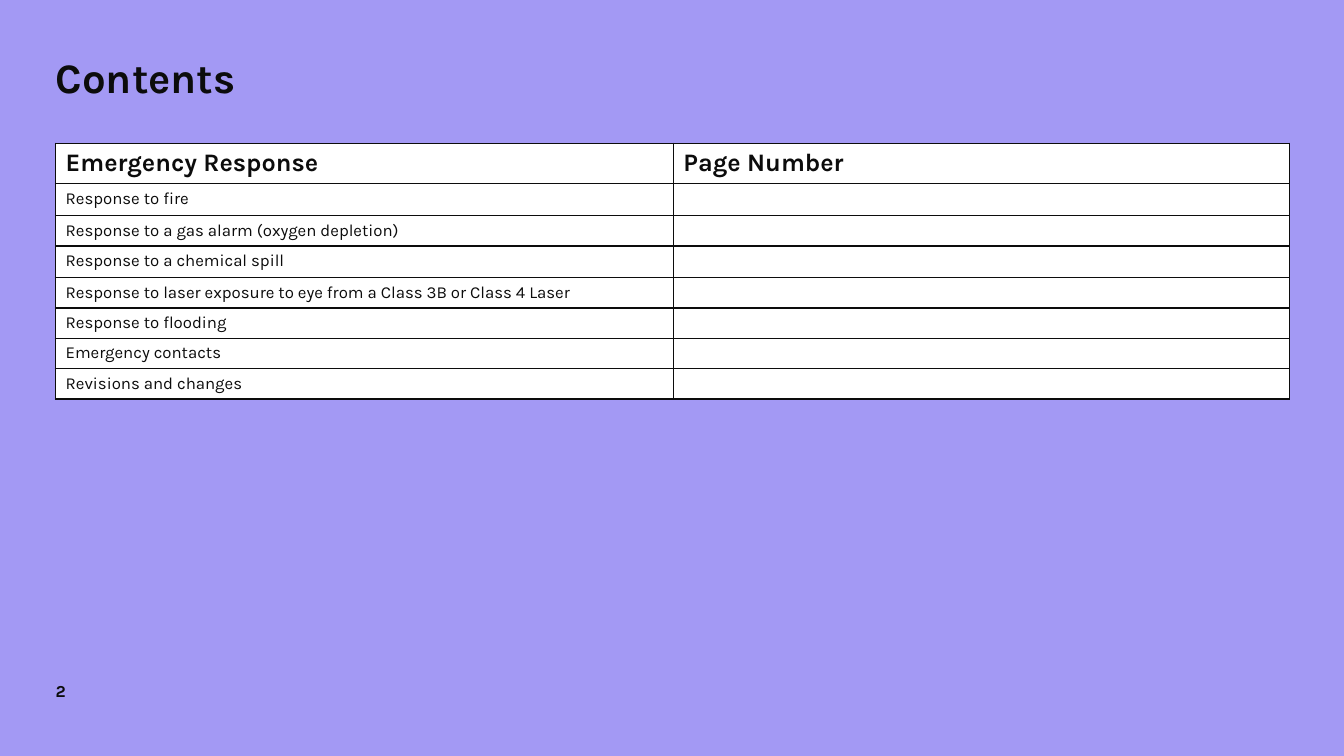
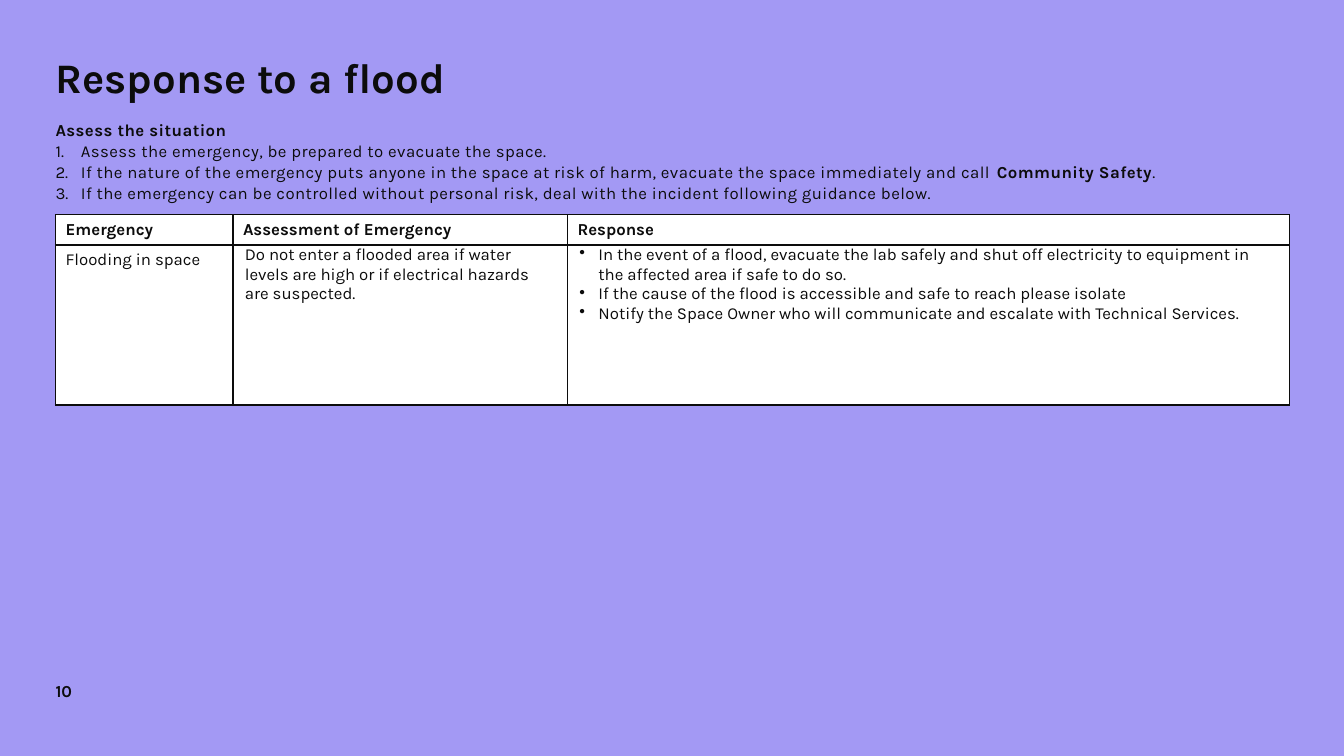
from lxml.etree import SubElement
from pptx import Presentation
from pptx.dml.color import RGBColor
from pptx.enum.text import MSO_ANCHOR
from pptx.oxml.ns import qn
from pptx.util import Cm, Pt

LILAC = RGBColor(0xA3, 0x99, 0xF4)
INK = RGBColor(0x0C, 0x0C, 0x0C)
WHITE = RGBColor(0xFF, 0xFF, 0xFF)
FACE = "Karla"
LEFT, WIDTH = 1.4, 31.09

TOPICS = [
    "Response to fire",
    "Response to a gas alarm (oxygen depletion)",
    "Response to a chemical spill",
    "Response to laser exposure to eye from a Class 3B or Class 4 Laser",
    "Response to flooding",
    "Emergency contacts",
    "Revisions and changes",
]
STEPS = [
    [("Assess the emergency, be prepared to evacuate the space.", False)],
    [("If the nature of the emergency puts anyone in the space at risk of harm, "
      "evacuate the space immediately and call ", False),
     ("Community Safety", True), (".", False)],
    [("If the emergency can be controlled without personal risk, "
      "deal with the incident following guidance below.", False)],
]
CAUTION = ("Do not enter a flooded area if water levels are high "
           "or if electrical hazards are suspected.")
ACTIONS = [
    "In the event of a flood, evacuate the lab safely and shut off electricity "
    "to equipment in the affected area if safe to do so.",
    "If the cause of the flood is accessible and safe to reach please isolate",
    "Notify the Space Owner who will communicate and escalate with Technical Services.",
]


def style(para, size=12, bold=False):
    font = para.font
    font.name, font.size, font.bold = FACE, Pt(size), bold
    font.color.rgb = INK


def mark(para, indent, tag, **attrs):
    """Give a paragraph a hanging bullet or number."""
    props = para._p.get_or_add_pPr()
    props.set("marL", str(Cm(indent)))
    props.set("indent", str(-Cm(indent)))
    SubElement(props, qn(tag), **attrs)


def track(para, points):
    """Set letter spacing; the paragraph must already have its font."""
    para._p.pPr.find(qn("a:defRPr")).set("spc", str(round(points * 100)))


def next_para(frame, index):
    return frame.add_paragraph() if index else frame.paragraphs[0]


def add_box(slide, left, top, width, height, anchor=MSO_ANCHOR.TOP):
    box = slide.shapes.add_textbox(Cm(left), Cm(top), Cm(width), Cm(height))
    frame = box.text_frame
    frame.word_wrap = True
    frame.vertical_anchor = anchor
    frame.margin_left = frame.margin_right = 0
    frame.margin_top = frame.margin_bottom = 0
    return frame


def add_page(deck, title, number):
    """Add a slide with the shared background, title and page number."""
    slide = deck.slides.add_slide(deck.slide_layouts[6])
    fill = slide.background.fill
    fill.solid()
    fill.fore_color.rgb = LILAC

    head = add_box(slide, LEFT, 1.5, WIDTH, 1.07, MSO_ANCHOR.BOTTOM).paragraphs[0]
    head.text = title
    head.line_spacing = 0.8
    style(head, 30, True)

    foot = add_box(slide, LEFT, 16.66, 1, 1, MSO_ANCHOR.BOTTOM).paragraphs[0]
    foot.text = str(number)
    style(foot, 12, True)
    return slide


def frame_cell(cell):
    """Draw the cell's four borders and its white fill."""
    props = cell._tc.get_or_add_tcPr()
    for side in ("L", "R", "T", "B"):
        line = SubElement(props, qn("a:ln" + side), w=str(Pt(1)))
        paint = SubElement(line, qn("a:solidFill"))
        SubElement(paint, qn("a:srgbClr"), val=str(INK))
    cell.fill.solid()
    cell.fill.fore_color.rgb = WHITE


def add_grid(slide, top, widths, heights, rows, head_size):
    """Add a table whose first row is bold; a cell given as a list is bulleted."""
    shape = slide.shapes.add_table(len(heights), len(widths), Cm(LEFT), Cm(top),
                                   Cm(sum(widths)), Cm(sum(heights)))
    grid = shape.table
    grid.first_row = grid.horz_banding = False
    for col, width in zip(grid.columns, widths):
        col.width = Cm(width)
    for row, height, texts in zip(grid.rows, heights, rows):
        row.height = Cm(height)
        is_head = row is grid.rows[0] or texts is rows[0]
        for cell, text in zip(row.cells, texts):
            frame_cell(cell)
            lines = text if isinstance(text, list) else [text]
            for i, line in enumerate(lines):
                para = next_para(cell.text_frame, i)
                if isinstance(text, list):
                    mark(para, 0.48, "a:buChar", char="•")
                if line:
                    para.text = line
                else:
                    SubElement(para._p, qn("a:endParaRPr"), sz="1200")
                style(para, head_size if is_head else 12, is_head)
    return grid


def add_steps(slide, top, height, heading, steps):
    frame = add_box(slide, LEFT, top, WIDTH, height)
    for i, parts in enumerate([[(heading, True)]] + steps):
        para = next_para(frame, i)
        para.line_spacing = 1.04
        if i:
            mark(para, 0.64, "a:buAutoNum", type="arabicPeriod")
        style(para, bold=not i)
        track(para, 0.3)
        for text, bold in parts:
            run = para.add_run()
            run.text = text
            if bold and i:
                run.font.bold = True


def add_contents(deck):
    slide = add_page(deck, "Contents", 2)
    rows = [("Emergency Response", "Page Number")] + [(topic, "") for topic in TOPICS]
    heights = [1, 0.81, 0.75, 0.8, 0.74, 0.75, 0.75, 0.75]
    add_grid(slide, 3.61, [15.57, 15.52], heights, rows, 18)


def add_flood(deck):
    slide = add_page(deck, "Response to a flood", 10)
    add_steps(slide, 3, 1.57, "Assess the situation", STEPS)
    rows = [("Emergency", "Assessment of Emergency", "Response"),
            ("Flooding in space", CAUTION, ACTIONS)]
    grid = add_grid(slide, 5.41, [4.47, 8.43, 18.19], [0.75, 4.03], rows, 12)
    for col in (1, 2):
        cell = grid.cell(1, col)
        cell.margin_left = cell.margin_right = Cm(0.3)
        cell.margin_top = cell.margin_bottom = 0


def main():
    deck = Presentation()
    deck.slide_width, deck.slide_height = Cm(33.87), Cm(19.05)
    add_contents(deck)
    add_flood(deck)
    deck.save("out.pptx")


if __name__ == "__main__":
    main()
